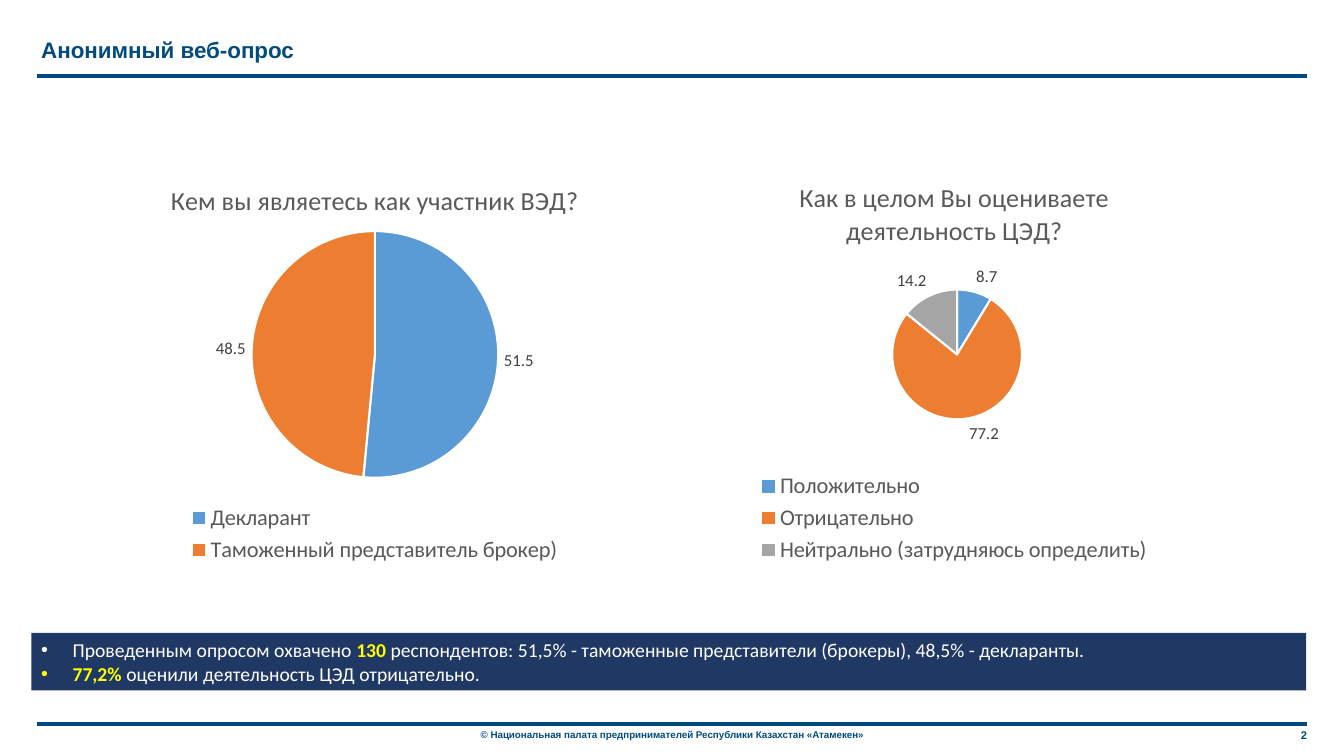
from dataclasses import dataclass

from lxml import etree
from pptx import Presentation
from pptx.chart.data import CategoryChartData
from pptx.dml.color import RGBColor
from pptx.enum.chart import XL_CHART_TYPE, XL_LABEL_POSITION, XL_LEGEND_POSITION
from pptx.enum.shapes import MSO_CONNECTOR, MSO_SHAPE
from pptx.enum.text import MSO_ANCHOR, PP_ALIGN
from pptx.oxml.ns import qn
from pptx.util import Cm, Pt

PIE = XL_CHART_TYPE.PIE
OUTSIDE_END = XL_LABEL_POSITION.OUTSIDE_END
BOTTOM = XL_LEGEND_POSITION.BOTTOM
STRAIGHT = MSO_CONNECTOR.STRAIGHT
RECTANGLE = MSO_SHAPE.RECTANGLE
MIDDLE = MSO_ANCHOR.MIDDLE
LEFT, CENTER, RIGHT = PP_ALIGN.LEFT, PP_ALIGN.CENTER, PP_ALIGN.RIGHT


@dataclass(frozen=True)
class Theme:
    heading_font: str = "Arial"
    body_font: str = "Calibri"
    rule: str = "004A7A"
    heading: str = "024C7D"
    copyright: str = "004C7E"
    panel: str = "203864"
    white: str = "FFFFFF"
    highlight: str = "FFFF00"
    chart_text: str = "595959"
    label_text: str = "404040"
    slices: tuple = ("5B9BD5", "ED7D31", "A5A5A5")
    heading_size: float = 16
    number_size: float = 8
    copyright_size: float = 7
    chart_title_size: float = 18.6
    legend_size: float = 16
    label_size: float = 12
    summary_size: float = 14
    rule_width: float = 2.5


THEME = Theme()


@dataclass(frozen=True)
class Box:
    left: float
    top: float
    width: float
    height: float

    def lengths(self):
        return Cm(self.left), Cm(self.top), Cm(self.width), Cm(self.height)


def style_font(font, name, size, color, bold=False):
    font.name = name
    font.size = Pt(size)
    font.bold = bold
    font.color.rgb = RGBColor.from_string(color)


def add_heading_text(slide, box, text, size, color, alignment):
    frame = slide.shapes.add_textbox(*box.lengths()).text_frame
    frame.word_wrap = True
    paragraph = frame.paragraphs[0]
    paragraph.text = text
    paragraph.alignment = alignment
    style_font(paragraph.font, THEME.heading_font, size, color, True)


def add_rule(slide, left, top, width):
    line = slide.shapes.add_connector(
        STRAIGHT, Cm(left), Cm(top), Cm(left + width), Cm(top))
    line.line.color.rgb = RGBColor.from_string(THEME.rule)
    line.line.width = Pt(THEME.rule_width)
    etree.SubElement(line._element.spPr, qn("a:effectLst"))


def add_header(slide, box, text):
    title_box = Box(box.left - 0.15, box.top, 22.28, 0.94)
    add_heading_text(slide, title_box, text, THEME.heading_size, THEME.heading, LEFT)
    add_rule(slide, box.left, box.top + box.height, box.width)


def add_footer(slide, box, text, number):
    add_rule(slide, box.left, box.top, box.width)
    number_box = Box(box.left + box.width - 1.55, box.top, 1.8, box.height)
    add_heading_text(slide, number_box, number, THEME.number_size, THEME.rule, RIGHT)
    text_box = Box(box.left + (box.width - 11.9) / 2, box.top, 11.9, box.height)
    add_heading_text(
        slide, text_box, text, THEME.copyright_size, THEME.copyright, CENTER)


def set_layout(parent, before, **fractions):
    for layout in parent.findall(qn("c:layout")):
        parent.remove(layout)
    layout = etree.Element(qn("c:layout"))
    manual = etree.SubElement(layout, qn("c:manualLayout"))
    if "w" in fractions:
        etree.SubElement(manual, qn("c:layoutTarget")).set("val", "inner")
    for axis in "xy":
        etree.SubElement(manual, qn(f"c:{axis}Mode")).set("val", "edge")
    for key, value in fractions.items():
        etree.SubElement(manual, qn(f"c:{key}")).set("val", str(value))
    parent.find(qn(before)).addprevious(layout)


def add_pie(slide, box, title, answers, title_left, plot):
    data = CategoryChartData()
    data.categories = list(answers)
    data.add_series("Series 1", answers.values())
    chart = slide.shapes.add_chart(PIE, *box.lengths(), data).chart
    style_font(chart.font, THEME.body_font, THEME.legend_size, THEME.chart_text)

    chart.has_title = True
    title_frame = chart.chart_title.text_frame
    for index, line in enumerate(title):
        paragraph = title_frame.paragraphs[0] if index == 0 else title_frame.add_paragraph()
        paragraph.text = line
        style_font(paragraph.font, THEME.body_font, THEME.chart_title_size, THEME.chart_text)
    chart.chart_title.include_in_layout = False
    set_layout(chart.chart_title._element, "c:overlay", x=title_left, y=0.05)

    chart.has_legend = True
    chart.legend.position = BOTTOM
    chart.legend.include_in_layout = False
    style_font(chart.legend.font, THEME.body_font, THEME.legend_size, THEME.chart_text)

    pie = chart.plots[0]
    pie.vary_by_categories = True
    set_layout(chart._chartSpace.chart.plotArea, "c:pieChart", **plot)
    series = pie.series[0]
    for index in range(len(answers)):
        slice_format = series.points[index].format
        slice_format.fill.solid()
        slice_format.fill.fore_color.rgb = RGBColor.from_string(THEME.slices[index])
        slice_format.line.color.rgb = RGBColor.from_string(THEME.white)
        slice_format.line.width = Pt(1.5)
    labels = series.data_labels
    labels.show_value = True
    labels.show_percentage = False
    labels.position = OUTSIDE_END
    style_font(labels.font, THEME.body_font, THEME.label_size, THEME.label_text)


def add_summary(slide, box, points):
    panel = slide.shapes.add_shape(RECTANGLE, *box.lengths())
    panel.shadow.inherit = False
    panel.fill.solid()
    panel.fill.fore_color.rgb = RGBColor.from_string(THEME.panel)
    panel.line.fill.background()
    frame = panel.text_frame
    frame.word_wrap = True
    frame.vertical_anchor = MIDDLE
    for index, point in enumerate(points):
        paragraph = frame.paragraphs[0] if index == 0 else frame.add_paragraph()
        paragraph.alignment = LEFT
        properties = paragraph._p.get_or_add_pPr()
        properties.set("marL", str(Cm(0.79)))
        properties.set("indent", str(-Cm(0.79)))
        etree.SubElement(properties, qn("a:buFont")).set("typeface", "Arial")
        etree.SubElement(properties, qn("a:buChar")).set("char", "•")
        for text, highlighted in point:
            run = paragraph.add_run()
            run.text = text
            color = THEME.highlight if highlighted else THEME.white
            style_font(run.font, THEME.body_font, THEME.summary_size, color, highlighted)


def main():
    presentation = Presentation()
    presentation.slide_width, presentation.slide_height = Cm(33.87), Cm(19.05)
    slide = presentation.slides.add_slide(presentation.slide_layouts[6])
    add_header(slide, Box(0.94, 0.79, 32, 1.12), "Анонимный веб-опрос")
    add_pie(
        slide, Box(2.34, 3.96, 14.22, 10.36),
        ["Кем вы являетесь как участник ВЭД?"],
        {"Декларант": 51.5, "Таможенный представитель брокер)": 48.5},
        0.13, {"x": 0.28, "y": 0.18, "w": 0.44, "h": 0.6})
    add_pie(
        slide, Box(16.94, 3.96, 14.22, 10.36),
        ["Как в целом Вы оцениваете", "деятельность ЦЭД?"],
        {"Положительно": 8.7, "Отрицательно": 77.2,
         "Нейтрально (затрудняюсь определить)": 14.2},
        0.22, {"x": 0.39, "y": 0.32, "w": 0.23, "h": 0.32})
    add_summary(slide, Box(0.79, 15.95, 32.13, 1.45), [
        [("Проведенным опросом охвачено ", False), ("130 ", True),
         ("респондентов: 51,5% - таможенные представители (брокеры), "
          "48,5% - декларанты.", False)],
        [("77,2%", True), (" оценили деятельность ЦЭД отрицательно.", False)],
    ])
    add_footer(
        slide, Box(0.94, 18.24, 32, 0.57),
        "© Национальная палата предпринимателей Республики Казахстан «Атамекен»", "2")
    presentation.save("out.pptx")


if __name__ == "__main__":
    main()
